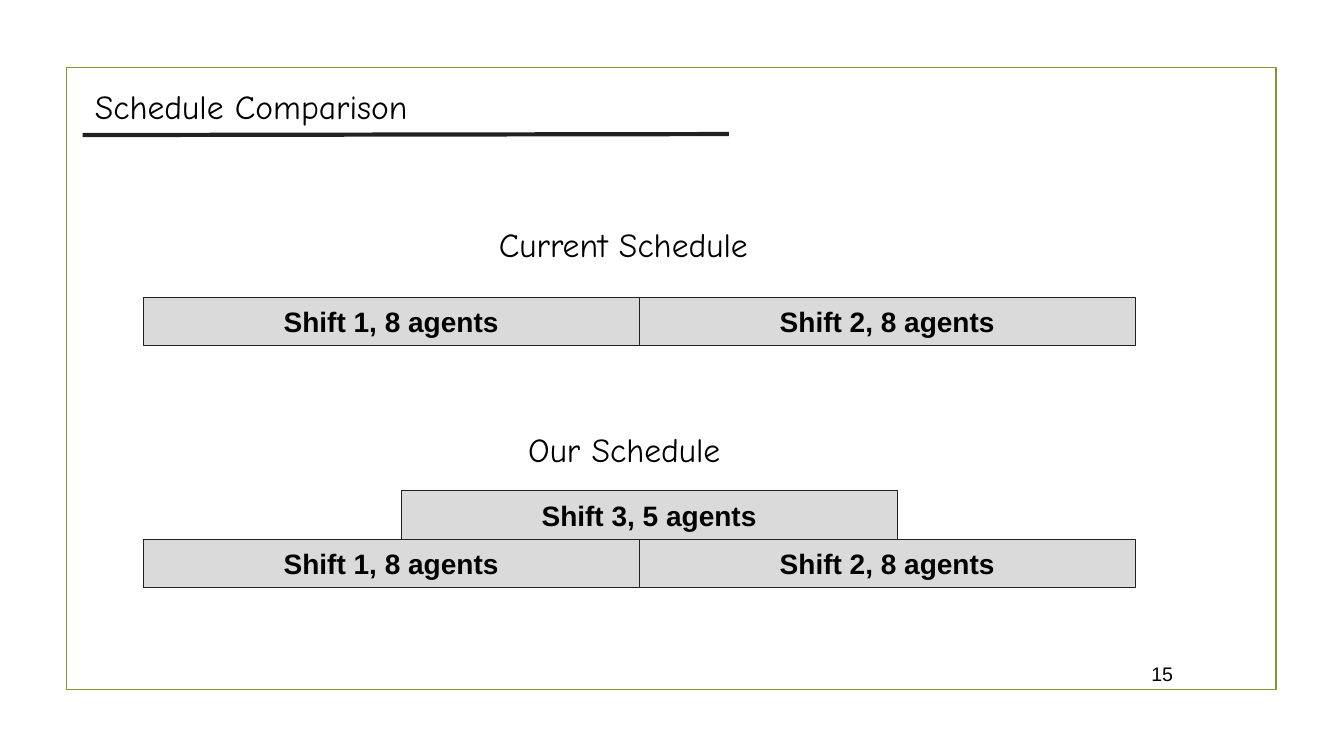
"""Build the schedule comparison slide with its shift bars."""
import dataclasses

import lxml.etree
import pptx
import pptx.dml.color
import pptx.enum.shapes
import pptx.enum.text
import pptx.oxml.ns
import pptx.util

COLOURS = {"frame": "83992A", "rule": "212121", "bar": "DADADA", "text": "000000"}
HEADING_FONT, BODY_FONT = "Comic Neue", "Arial"
SLIDE_WIDTH, SLIDE_HEIGHT = 13.33, 7.5
GRID_LEFT, GRID_TOP = 1.42, 2.95
COLUMN_WIDTH, ROW_HEIGHT = 4.92, 0.48
INSET = 0.1


@dataclasses.dataclass(frozen=True)
class Area:
    left: float
    top: float
    width: float
    height: float

    def emu(self) -> tuple:
        return tuple(
            pptx.util.Inches(value)
            for value in (self.left, self.top, self.width, self.height)
        )


@dataclasses.dataclass(frozen=True)
class Shift:
    label: str
    column: float
    row: int

    def area(self) -> Area:
        return Area(
            GRID_LEFT + self.column * COLUMN_WIDTH,
            GRID_TOP + self.row * ROW_HEIGHT,
            COLUMN_WIDTH,
            ROW_HEIGHT,
        )


@dataclasses.dataclass(frozen=True)
class Label:
    text: str
    area: Area
    size: float = 24
    font: str = HEADING_FONT
    anchor: pptx.enum.text.MSO_ANCHOR = pptx.enum.text.MSO_ANCHOR.TOP
    inset: float = INSET


TITLE = Label("Schedule Comparison", Area(0.84, 0.75, 4.36, 0.57))
LABELS = (
    Label("Current Schedule", Area(4.85, 2.12, 3.44, 0.57)),
    Label("Our Schedule", Area(5.14, 4.15, 2.39, 0.48)),
    Label("15", Area(11.32, 6.53, 0.59, 0.31), 14, BODY_FONT,
          pptx.enum.text.MSO_ANCHOR.MIDDLE, INSET / 2),
)
SHIFTS = (
    Shift("Shift 1, 8 agents", 0, 0),
    Shift("Shift 2, 8 agents", 1, 0),
    Shift("Shift 1, 8 agents", 0, 5),
    Shift("Shift 2, 8 agents", 1, 5),
    Shift("Shift 3, 5 agents", 0.52, 4),
)


def colour(name: str) -> pptx.dml.color.RGBColor:
    return pptx.dml.color.RGBColor.from_string(COLOURS[name])


def write(box, label: Label, align=pptx.enum.text.PP_ALIGN.LEFT, bold: bool = False) -> None:
    frame = box.text_frame
    frame.auto_size = pptx.enum.text.MSO_AUTO_SIZE.NONE
    frame.word_wrap = True
    frame.vertical_anchor = label.anchor
    frame.margin_left = frame.margin_right = pptx.util.Inches(INSET)
    frame.margin_top = frame.margin_bottom = pptx.util.Inches(label.inset)
    para = frame.paragraphs[0]
    para.alignment = align
    span = para.add_run()
    span.text = label.text
    span.font.name = label.font
    span.font.size = pptx.util.Pt(label.size)
    span.font.bold = bold
    span.font.color.rgb = colour("text")


def add_box(page, area: Area, line: str, weight: float):
    box = page.shapes.add_shape(pptx.enum.shapes.MSO_SHAPE.RECTANGLE, *area.emu())
    box.shadow.inherit = False
    box.fill.background()
    box.line.color.rgb = colour(line)
    box.line.width = pptx.util.Pt(weight)
    return box


def add_shift(page, shift: Shift) -> None:
    box = add_box(page, shift.area(), "rule", 0.75)
    box.fill.solid()
    box.fill.fore_color.rgb = colour("bar")
    label = Label(shift.label, shift.area(), 20, BODY_FONT, pptx.enum.text.MSO_ANCHOR.MIDDLE)
    write(box, label, pptx.enum.text.PP_ALIGN.CENTER, True)


def add_title(page, label: Label) -> None:
    title = page.shapes.title
    title.left, title.top, title.width, title.height = label.area.emu()
    write(title, label)


def add_rule(page) -> None:
    ends = (pptx.util.Inches(value) for value in (0.82, 1.34, 7.23, 1.33))
    rule = page.shapes.add_connector(pptx.enum.shapes.MSO_CONNECTOR.STRAIGHT, *ends)
    rule.line.color.rgb = colour("rule")
    rule.line.width = pptx.util.Pt(3)
    properties = rule._element.spPr
    lxml.etree.SubElement(properties, pptx.oxml.ns.qn("a:effectLst"))


def main() -> None:
    deck = pptx.Presentation()
    deck.slide_width = pptx.util.Inches(SLIDE_WIDTH)
    deck.slide_height = pptx.util.Inches(SLIDE_HEIGHT)
    page = deck.slides.add_slide(deck.slide_layouts.get_by_name("Title Only"))
    add_box(page, Area(0.66, 0.67, 12, 6.17), "frame", 1.25)
    add_title(page, TITLE)
    add_rule(page)
    for shift in SHIFTS:
        add_shift(page, shift)
    for label in LABELS:
        write(page.shapes.add_textbox(*label.area.emu()), label)
    deck.save("out.pptx")


if __name__ == "__main__":
    main()
